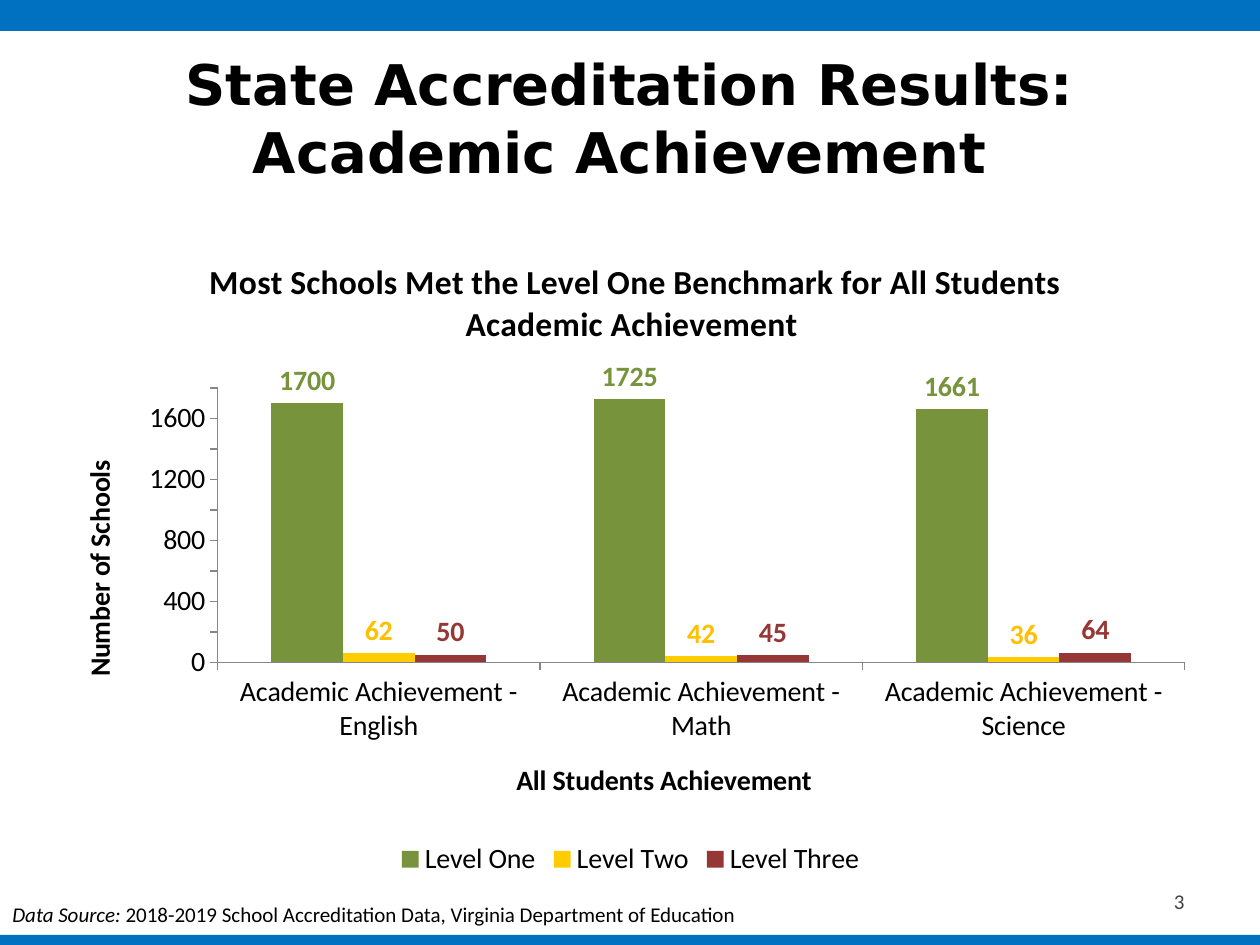
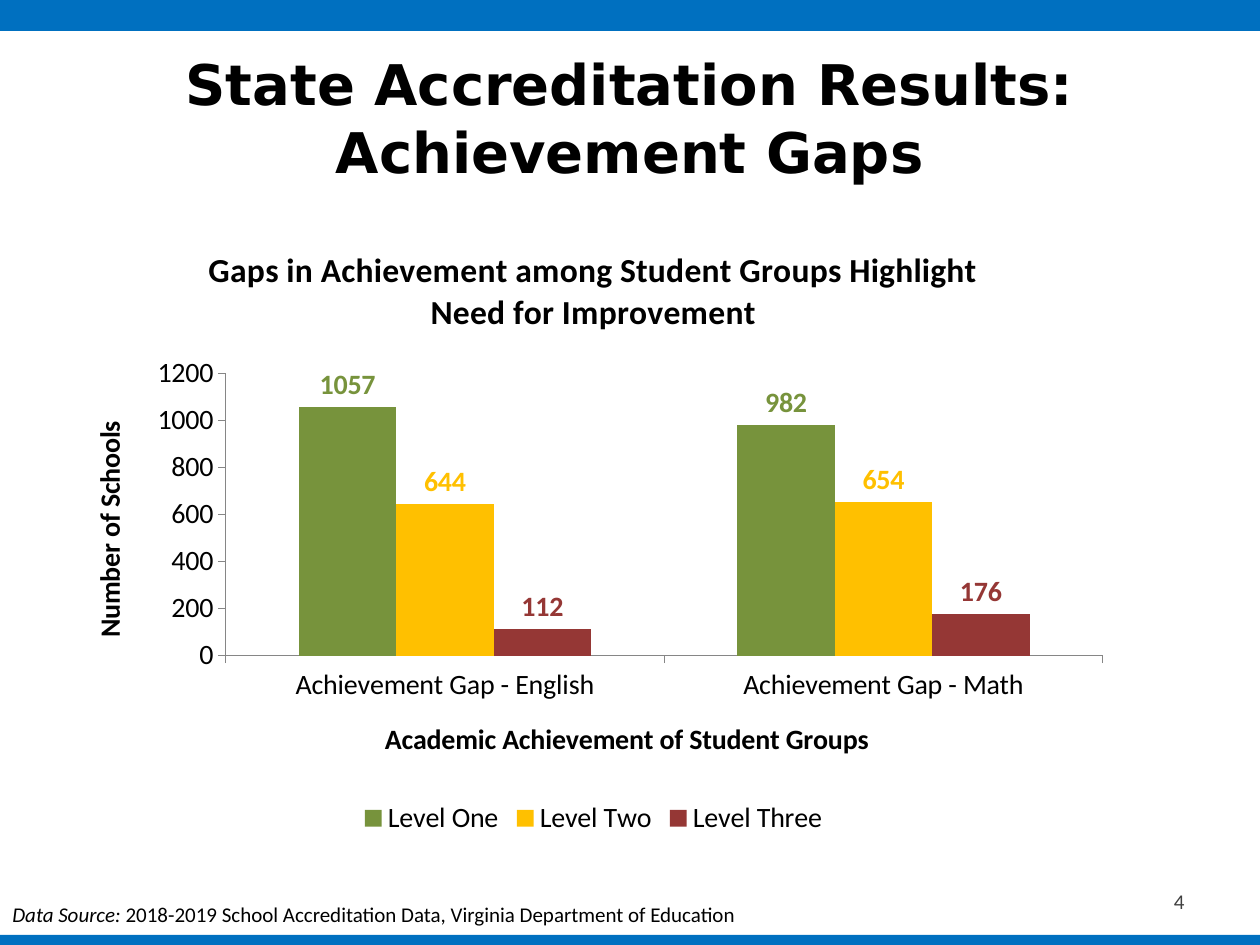
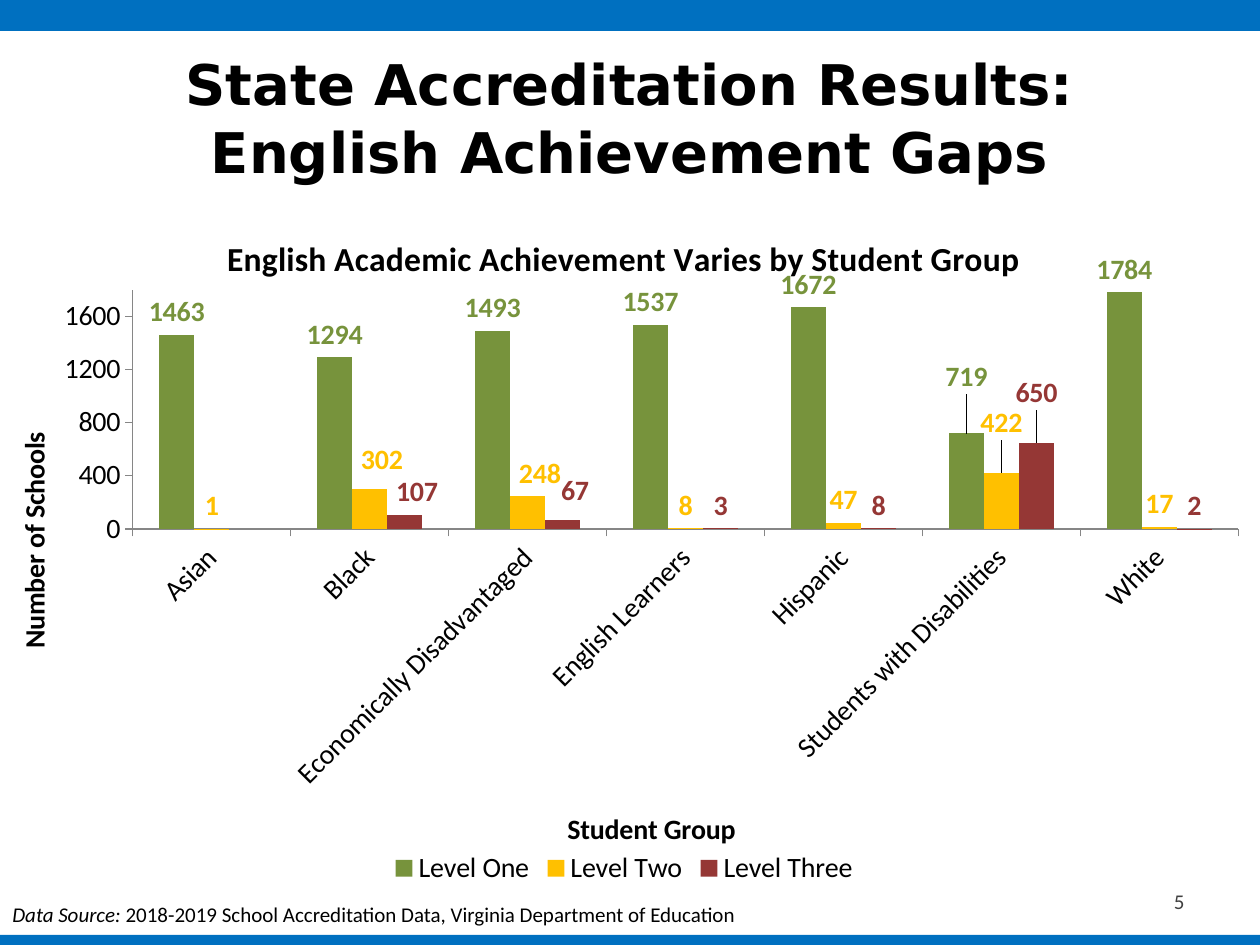
from lxml import etree
from pptx import Presentation
from pptx import util as u
from pptx.chart.data import CategoryChartData
from pptx.dml.color import RGBColor
from pptx.enum import chart as ch, shapes, text
from pptx.oxml.ns import qn

PX = 914400 / 126
WIDTH, HEIGHT = 1260, 945
BLUE = RGBColor(0x00, 0x70, 0xC0)
BLACK = RGBColor(0, 0, 0)
DARK = RGBColor(0x40, 0x40, 0x40)
AXIS_GRAY = RGBColor(0x86, 0x86, 0x86)
GREEN = RGBColor(0x77, 0x93, 0x3C)
GOLD = RGBColor(0xFF, 0xC0, 0x00)
YELLOW = RGBColor(0xFF, 0xCC, 0x00)
RED = RGBColor(0x95, 0x37, 0x35)
BODY, HEADING = "Calibri", "DejaVu Sans"
LEVELS = ("Level One", "Level Two", "Level Three")
LABEL_COLORS = (GREEN, GOLD, RED)
SOURCE = (("Data Source: ", True),
          ("2018-2019 School Accreditation Data, Virginia Department of Education", False))


def emu(*lengths):
    return [u.Emu(round(n * PX)) for n in lengths]


def set_font(font, size, color=BLACK, bold=False, italic=False, name=BODY):
    font.name, font.size = name, u.Pt(size)
    font.bold, font.italic = bold, italic
    font.color.rgb = color


def manual_layout(**values):
    layout = etree.Element(qn("c:layout"))
    manual = etree.SubElement(layout, qn("c:manualLayout"))
    for tag, val in values.items():
        etree.SubElement(manual, qn("c:" + tag)).set("val", str(val))
    return layout


class Deck:
    def __init__(self):
        self.prs = Presentation()
        self.prs.slide_width, self.prs.slide_height = emu(WIDTH, HEIGHT)
        self.s = None

    def slide(self, title, number):
        self.s = self.prs.slides.add_slide(self.prs.slide_layouts[6])
        self.band(935, 10)
        self.band(0, 31)
        self.text((63, 38, 1134, 158), ((title, False),), 32, bold=True, name=HEADING,
                  align=text.PP_ALIGN.CENTER, anchor=text.MSO_ANCHOR.MIDDLE)
        self.text((903, 876, 294, 50), ((str(number), False),), 12, DARK,
                  align=text.PP_ALIGN.RIGHT, anchor=text.MSO_ANCHOR.MIDDLE)
        self.text((0, 895, 756, 38), SOURCE, 12, wrap=False)

    def band(self, top, height):
        sp = self.s.shapes.add_shape(shapes.MSO_SHAPE.RECTANGLE, *emu(0, top, WIDTH, height))
        sp.shadow.inherit = False
        sp.fill.solid()
        sp.fill.fore_color.rgb = BLUE
        sp.line.fill.background()

    def text(self, box, runs, size, color=BLACK, bold=False, name=BODY,
             align=text.PP_ALIGN.LEFT, anchor=text.MSO_ANCHOR.TOP, wrap=True):
        tf = self.s.shapes.add_textbox(*emu(*box)).text_frame
        tf.word_wrap, tf.vertical_anchor = wrap, anchor
        p = tf.paragraphs[0]
        p.alignment = align
        for words, italic in runs:
            r = p.add_run()
            r.text = words
            set_font(r.font, size, color, bold, italic, name)

    def chart(self, box, title, cat_title, val_title, cats, values, top, step,
              fills=LABEL_COLORS):
        data = CategoryChartData()
        data.categories = cats
        for level, vals in zip(LEVELS, values):
            data.add_series(level, vals)
        chart = self.s.shapes.add_chart(
            ch.XL_CHART_TYPE.COLUMN_CLUSTERED, *emu(*box), data).chart
        set_font(chart.font, 16)
        self.chart_title(chart, title, 19.2)
        chart.has_legend = True
        chart.legend.position = ch.XL_LEGEND_POSITION.BOTTOM
        chart.legend.include_in_layout = False
        set_font(chart.legend.font, 16)
        for axis, name in ((chart.category_axis, cat_title), (chart.value_axis, val_title)):
            self.chart_title(axis, name, 16)
            axis.has_major_gridlines = False
            axis.major_tick_mark = ch.XL_TICK_MARK.OUTSIDE
            axis.format.line.color.rgb = AXIS_GRAY
            set_font(axis.tick_labels.font, 16)
        chart.value_axis.minimum_scale = 0
        chart.value_axis.maximum_scale = top
        chart.value_axis.major_unit = step
        plot = chart.plots[0]
        plot.gap_width, plot.overlap, plot.vary_by_categories = 150, 0, False
        for series, fill, color in zip(plot.series, fills, LABEL_COLORS):
            series.format.fill.solid()
            series.format.fill.fore_color.rgb = fill
            labels = series.data_labels
            labels.show_value = True
            labels.position = ch.XL_LABEL_POSITION.OUTSIDE_END
            set_font(labels.font, 16, color, True)
        return chart

    def chart_title(self, owner, words, size):
        tf = (owner.chart_title if hasattr(owner, "chart_title") else owner.axis_title).text_frame
        tf.text = words
        set_font(tf.paragraphs[0].runs[0].font, size, bold=True)

    def place_title(self, chart, x, y):
        title = chart.element.find(qn("c:chart")).find(qn("c:title"))
        for old in title.findall(qn("c:layout")):
            title.remove(old)
        title.find(qn("c:tx")).addnext(manual_layout(xMode="edge", yMode="edge", x=x, y=y))

    def place_plot(self, chart, x, y, w, h):
        area = chart.element.find(qn("c:chart")).find(qn("c:plotArea"))
        for old in area.findall(qn("c:layout")):
            area.remove(old)
        area.insert(0, manual_layout(layoutTarget="inner", xMode="edge", yMode="edge",
                                     x=x, y=y, w=w, h=h))

    def slant_categories(self, chart):
        body = chart.element.xpath(".//c:catAx/c:txPr/a:bodyPr")[0]
        body.set("rot", "-2700000")
        body.set("vert", "horz")

    def shift_label(self, chart, level, index, dx, dy):
        series = chart.plots[0].series[level]
        label = series.points[index].data_label
        set_font(label.font, 16, LABEL_COLORS[level], True)
        label.position = ch.XL_LABEL_POSITION.OUTSIDE_END
        idx = chart.element.xpath(
            f".//c:ser[c:idx/@val='{level}']/c:dLbls/c:dLbl/c:idx[@val='{index}']")[0]
        idx.addnext(manual_layout(x=dx, y=dy))


def main():
    deck = Deck()

    deck.slide("State Accreditation Results: Academic Achievement ", 3)
    chart = deck.chart(
        (53, 252, 1155, 630),
        "Most Schools Met the Level One Benchmark for All Students Academic Achievement ",
        "All Students Achievement ", "Number of Schools ",
        [f"Academic Achievement - {subject}" for subject in ("English", "Math", "Science")],
        ((1700, 1725, 1661), (62, 42, 36), (50, 45, 64)), 1800, 200, (GREEN, YELLOW, RED))
    deck.place_title(chart, 0.13, 0)

    deck.slide("State Accreditation Results: Achievement Gaps", 4)
    deck.chart(
        (63, 221, 1061, 620),
        "Gaps in Achievement among Student Groups Highlight Need for Improvement",
        "Academic Achievement of Student Groups ", "Number of Schools",
        [f"Achievement Gap - {subject}" for subject in ("English", "Math")],
        ((1057, 982), (644, 654), (112, 176)), 1200, 200)

    deck.slide("State Accreditation Results: English Achievement Gaps", 5)
    chart = deck.chart(
        (10, 208, 1229, 683), "English Academic Achievement Varies by Student Group",
        "Student Group", "Number of Schools",
        ("Asian", "Black", "Economically Disadvantaged", "English Learners", "Hispanic",
         "Students with Disabilities", "White"),
        ((1463, 1294, 1493, 1537, 1672, 719, 1784),
         (1, 302, 248, 8, 47, 422, 17),
         (None, 107, 67, 3, 8, 650, 2)), 1800, 400)
    deck.place_plot(chart, 0.1, 0.12, 0.9, 0.35)
    deck.slant_categories(chart)
    for level, index, dx, dy in ((0, 5, 0, -0.05), (1, 1, 0.01, -0.01), (1, 2, 0.01, 0),
                                 (1, 5, 0, -0.04), (2, 1, 0.01, 0), (2, 2, 0.01, -0.01),
                                 (2, 5, 0, -0.04)):
        deck.shift_label(chart, level, index, dx, dy)

    deck.prs.save("out.pptx")


if __name__ == "__main__":
    main()
